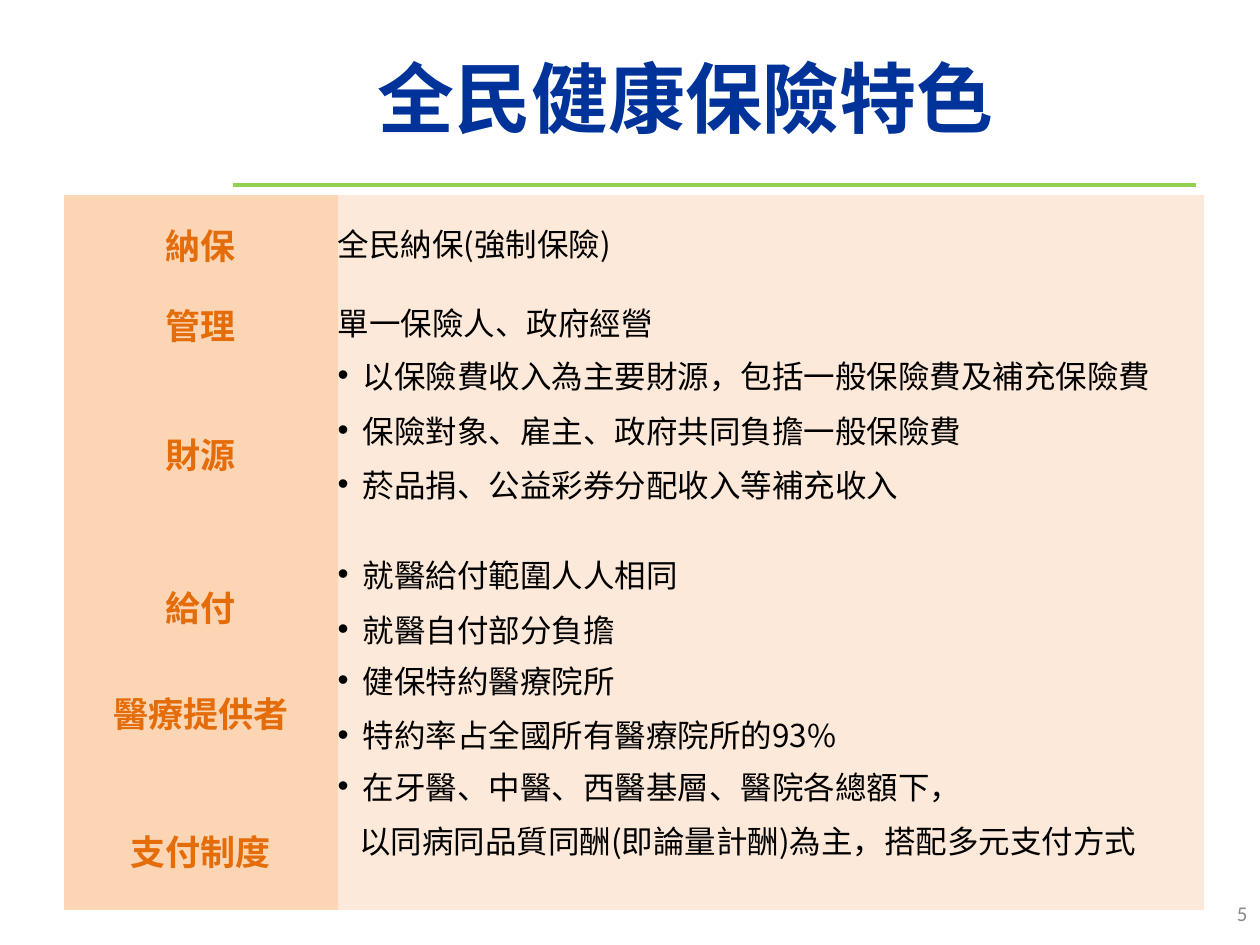
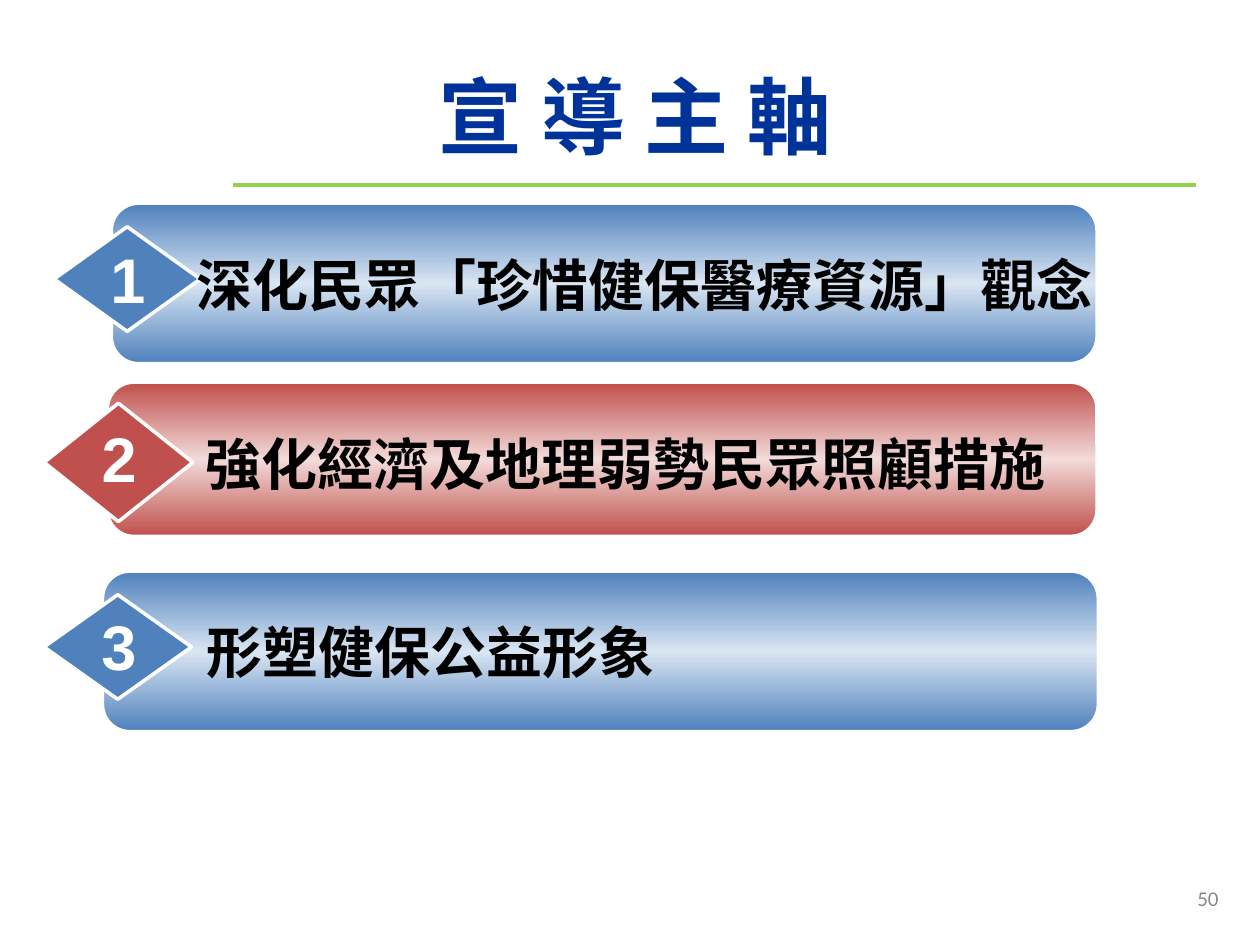
from copy import deepcopy

from pptx import Presentation
from pptx.dml.color import RGBColor
from pptx.enum.shapes import MSO_CONNECTOR, MSO_SHAPE
from pptx.enum.text import MSO_ANCHOR, PP_ALIGN
from pptx.oxml.ns import qn
from pptx.util import Inches, Pt
from lxml.etree import SubElement

COLORS = {
    "title": "003399", "rule": "92D050", "number": "898989",
    "label": "E46D0A", "label_fill": "FCD5B4", "detail_fill": "FDE9D9",
    "blue": "4F81BD", "light_blue": "D9E5F2",
    "red": "C0504D", "light_red": "F2DBD9",
    "black": "000000", "white": "FFFFFF",
}
CJK = "Noto Sans CJK SC"
BULLET_INDENT = 0.2
CONTINUED_INDENT = 0.17

FEATURES_TITLE = ("全民健康保險特色", 44, (1.85, 0.14, 7.18, 1.25))
FEATURES_NUMBER = ("5", (7.67, 7.1, 2.33, 0.4))
TABLE_AT = (0.51, 1.55)
COLUMN_WIDTHS = (2.17, 6.88)
FEATURES = [
    ("納保", 0.63, Pt(40), Pt(40), [("plain", "全民納保(強制保險)")]),
    ("管理", 0.63, Pt(40), Pt(40), [("plain", "單一保險人、政府經營")]),
    ("財源", 1.58, None, Pt(25), [
        ("bullet", "以保險費收入為主要財源，包括一般保險費及補充保險費"),
        ("bullet", "保險對象、雇主、政府共同負擔一般保險費"),
        ("bullet", "菸品捐、公益彩券分配收入等補充收入"),
    ]),
    ("給付", 0.84, None, Pt(25), [
        ("bullet", "就醫給付範圍人人相同"),
        ("bullet", "就醫自付部分負擔"),
    ]),
    ("醫療提供者", 0.84, None, Pt(25), [
        ("bullet", "健保特約醫療院所"),
        ("bullet", "特約率占全國所有醫療院所的93%"),
    ]),
    ("支付制度", 1.15, 1.5, Pt(25), [
        ("bullet", "在牙醫、中醫、西醫基層、醫院各總額下，"),
        ("continued", "以同病同品質同酬(即論量計酬)為主，搭配多元支付方式"),
    ]),
]

THEMES_TITLE = ("宣 導 主 軸", 48, (1.69, 0.29, 6.7, 1.25))
THEMES_NUMBER = ("50", (7.44, 6.98, 2.33, 0.35))
THEMES = [
    dict(text="深化民眾「珍惜健保醫療資源」觀念", hue="blue", align=PP_ALIGN.LEFT,
         bar=(0.89, 1.62, 7.81, 1.26), diamond=(0.43, 1.8, 1.16, 0.83),
         digit=(0.67, 1.86, 0.69, 0.71), caption=(1.46, 1.94, 7.38, 0.64)),
    dict(text="強化經濟及地理弱勢民眾照顧措施", hue="red", align=PP_ALIGN.CENTER,
         bar=(0.86, 3.04, 7.84, 1.21), diamond=(0.35, 3.2, 1.18, 0.94),
         digit=(0.59, 3.28, 0.71, 0.71), caption=(1.38, 3.36, 7.17, 0.64)),
    dict(text="形塑健保公益形象", hue="blue", align=PP_ALIGN.LEFT,
         bar=(0.82, 4.54, 7.89, 1.26), diamond=(0.35, 4.72, 1.17, 0.83),
         digit=(0.51, 4.77, 0.87, 0.71), caption=(1.54, 4.85, 4.19, 0.64)),
]


def rgb(name):
    return RGBColor.from_string(COLORS[name])


def inches(box):
    return [Inches(v) for v in box]


def add_run(p, text, size, color, bold=False, font=CJK):
    r = p.add_run()
    r.text = text
    r.font.size = Pt(size)
    r.font.bold = bold
    r.font.name = font
    r.font.color.rgb = rgb(color)
    SubElement(r.font._element, qn("a:ea")).set("typeface", font)


def add_text(s, box, text, size, color, align, bold=False, font=CJK):
    tf = s.shapes.add_textbox(*inches(box)).text_frame
    tf.word_wrap = True
    p = tf.paragraphs[0]
    p.alignment = align
    add_run(p, text, size, color, bold, font)


def add_slide(prs, title, number):
    s = prs.slides.add_slide(prs.slide_layouts[5])
    line = s.shapes.add_connector(
        MSO_CONNECTOR.STRAIGHT, *inches((1.85, 1.47, 9.49, 1.47)))
    line.line.color.rgb = rgb("rule")
    line.line.width = Pt(2.25)
    SubElement(line._element.spPr, qn("a:effectLst"))

    text, size, box = title
    sp = s.shapes.title
    sp.left, sp.top, sp.width, sp.height = inches(box)
    tf = sp.text_frame
    tf.vertical_anchor = MSO_ANCHOR.MIDDLE
    p = tf.paragraphs[0]
    p.alignment = PP_ALIGN.CENTER
    add_run(p, text, size, "title", True)

    text, box = number
    add_text(s, box, text, 12, "number", PP_ALIGN.RIGHT, font="Calibri")
    return s


def format_cell(cell, fill):
    cell.margin_left = cell.margin_right = 0
    cell.margin_top = cell.margin_bottom = 0
    cell.fill.solid()
    cell.fill.fore_color.rgb = rgb(fill)
    tc_pr = cell._tc.get_or_add_tcPr()
    for i, side in enumerate(("lnL", "lnR", "lnT", "lnB")):
        ln = SubElement(tc_pr, qn(f"a:{side}"))
        ln.set("w", "0")
        SubElement(ln, qn("a:noFill"))
        tc_pr.insert(i, ln)


def format_indent(p, kind):
    if kind == "plain":
        return
    p_pr = p._p.get_or_add_pPr()
    if kind == "bullet":
        p_pr.set("marL", str(Inches(BULLET_INDENT)))
        p_pr.set("indent", str(-Inches(BULLET_INDENT)))
        SubElement(p_pr, qn("a:buFont")).set("typeface", "Arial")
        SubElement(p_pr, qn("a:buChar")).set("char", "•")
    else:
        p_pr.set("marL", str(Inches(CONTINUED_INDENT)))
        p_pr.set("indent", "0")


def add_features_table(s):
    size = (sum(COLUMN_WIDTHS), sum(row[1] for row in FEATURES))
    table = s.shapes.add_table(
        len(FEATURES), len(COLUMN_WIDTHS), *inches(TABLE_AT + size)).table
    table.first_row = table.horz_banding = False
    for column, width in zip(table.columns, COLUMN_WIDTHS):
        column.width = Inches(width)
    for i, (label, height, label_spacing, spacing, details) in enumerate(FEATURES):
        table.rows[i].height = Inches(height)
        label_cell, detail_cell = table.cell(i, 0), table.cell(i, 1)
        format_cell(label_cell, "label_fill")
        format_cell(detail_cell, "detail_fill")
        label_cell.vertical_anchor = MSO_ANCHOR.MIDDLE
        p = label_cell.text_frame.paragraphs[0]
        p.alignment = PP_ALIGN.CENTER
        p.line_spacing = label_spacing
        add_run(p, label, 20, "label", True)

        tf = detail_cell.text_frame
        for j, (kind, text) in enumerate(details):
            p = tf.add_paragraph() if j else tf.paragraphs[0]
            p.line_spacing = spacing
            if j:
                p.space_before = Pt(6)
            format_indent(p, kind)
            add_run(p, text, 18, "black")


def add_outlined(s, kind, box, line_width):
    sp = s.shapes.add_shape(kind, *inches(box))
    sp.shadow.inherit = False
    sp.line.color.rgb = rgb("white")
    sp.line.width = Pt(line_width)
    return sp


def fill_mirrored(sp, edge, middle):
    sp.fill.gradient()
    sp.fill.gradient_angle = 90
    stops = sp._element.spPr.find(".//" + qn("a:gsLst"))
    stops.append(deepcopy(stops[0]))
    for stop, position, color in zip(
            sp.fill.gradient_stops, (0, 0.5, 1), (edge, middle, edge)):
        stop.position = position
        stop.color.rgb = rgb(color)


def add_theme(s, number, theme):
    hue = theme["hue"]
    bar = add_outlined(s, MSO_SHAPE.ROUNDED_RECTANGLE, theme["bar"], 1)
    fill_mirrored(bar, hue, f"light_{hue}")
    diamond = add_outlined(s, MSO_SHAPE.DIAMOND, theme["diamond"], 2)
    diamond.fill.solid()
    diamond.fill.fore_color.rgb = rgb(hue)
    add_text(s, theme["digit"], str(number), 36, "white",
             PP_ALIGN.CENTER, True, "Arial")
    add_text(s, theme["caption"], theme["text"], 32, "black",
             theme["align"], True)


def main():
    prs = Presentation()
    prs.slide_width, prs.slide_height = Inches(10), Inches(7.5)
    add_features_table(add_slide(prs, FEATURES_TITLE, FEATURES_NUMBER))
    s = add_slide(prs, THEMES_TITLE, THEMES_NUMBER)
    for number, theme in enumerate(THEMES, 1):
        add_theme(s, number, theme)
    prs.save("out.pptx")


if __name__ == "__main__":
    main()
